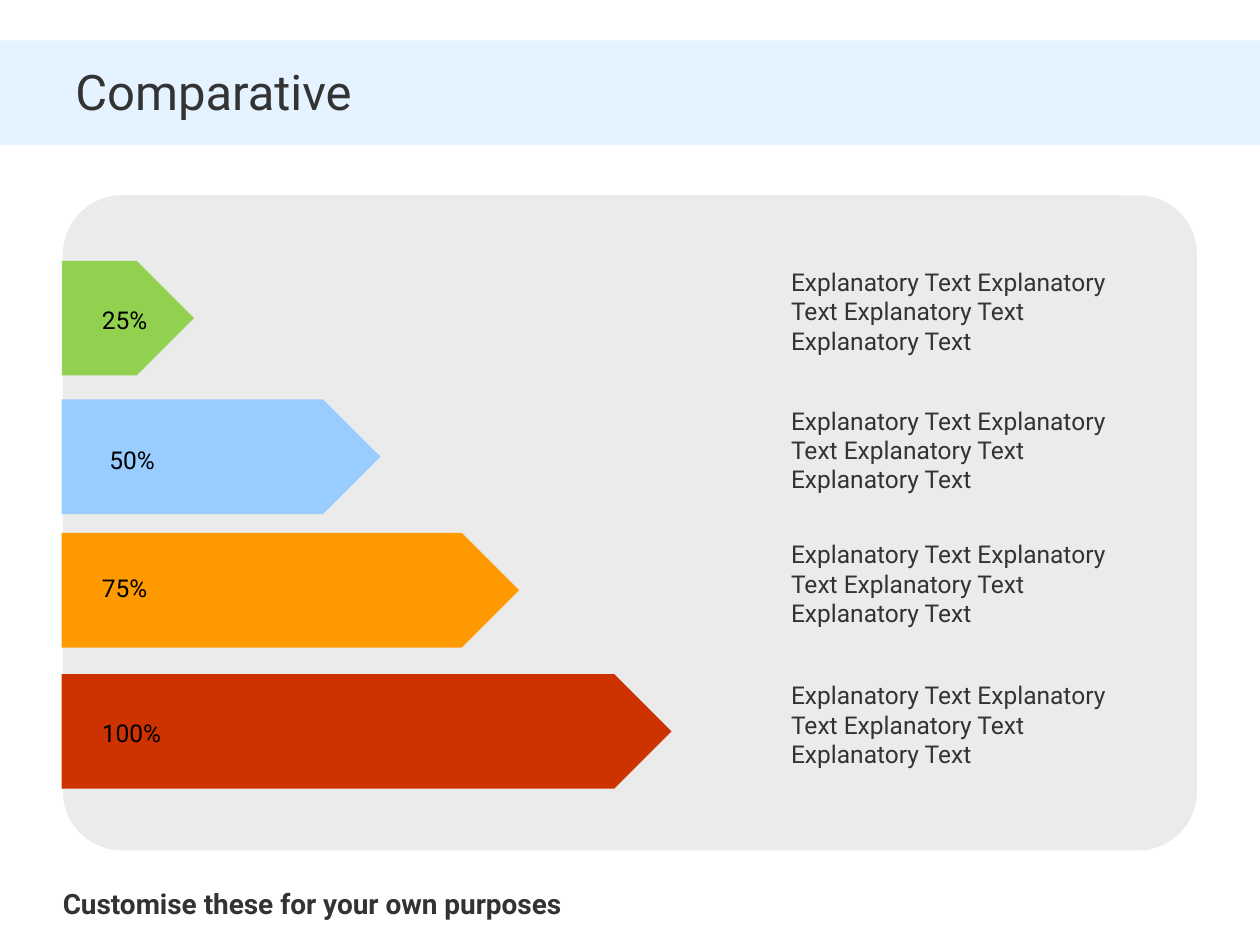
from dataclasses import dataclass

from lxml import etree
from pptx import Presentation
from pptx.dml.color import RGBColor
from pptx.enum.shapes import MSO_SHAPE
from pptx.oxml.ns import qn
from pptx.shapes.autoshape import Shape
from pptx.slide import Slide
from pptx.util import Inches, Pt

RECT = MSO_SHAPE.RECTANGLE
ROUNDED = MSO_SHAPE.ROUNDED_RECTANGLE
ARROW = MSO_SHAPE.PENTAGON


@dataclass(frozen=True)
class Theme:
    font: str = "Roboto"
    ink: str = "333333"
    label: str = "000000"
    band: str = "99CCFF"
    panel: str = "EBEBEB"
    title_size: int = 28
    body_size: int = 14
    footer_size: int = 16


@dataclass(frozen=True)
class Box:
    left: float
    top: float
    width: float
    height: float

    def lengths(self) -> list[int]:
        return [Inches(v) for v in (self.left, self.top, self.width, self.height)]


@dataclass(frozen=True)
class Level:
    label: str
    top: float
    width: float
    color: str
    label_left: float
    label_top: float


THEME = Theme()
EXPLANATION = "Explanatory Text Explanatory Text Explanatory Text Explanatory Text"
ARROW_LEFT, ARROW_HEIGHT = 0.49, 0.91
LEVELS = [
    Level("25%", 2.07, 1.05, "92D050", 0.71, 2.37),
    Level("50%", 3.17, 2.53, "99CCFF", 0.77, 3.48),
    Level("75%", 4.23, 3.63, "FF9900", 0.71, 4.5),
    Level("100%", 5.35, 4.84, "CC3300", 0.71, 5.65),
]


def add_filled(s: Slide, kind: MSO_SHAPE, box: Box, color: str) -> Shape:
    sp = s.shapes.add_shape(kind, *box.lengths())
    sp.shadow.inherit = False
    sp.fill.solid()
    sp.fill.fore_color.rgb = RGBColor.from_string(color)
    sp.line.fill.background()
    return sp


def set_alpha(sp: Shape, percent: int) -> None:
    color = sp._element.spPr.find(qn("a:solidFill")).find(qn("a:srgbClr"))
    etree.SubElement(color, qn("a:alpha")).set("val", str(percent * 1000))


def add_text(s: Slide, text: str, box: Box, size: int,
             color: str = THEME.ink, bold: bool = False) -> None:
    tf = s.shapes.add_textbox(*box.lengths()).text_frame
    tf.word_wrap = True
    p = tf.paragraphs[0]
    p.text = text
    p.font.name = THEME.font
    p.font.size = Pt(size)
    p.font.bold = bold
    p.font.color.rgb = RGBColor.from_string(color)


def add_level(s: Slide, level: Level) -> None:
    add_filled(s, ARROW, Box(ARROW_LEFT, level.top, level.width, ARROW_HEIGHT), level.color)
    add_text(s, level.label, Box(level.label_left, level.label_top, 0.84, 0.34),
             THEME.body_size, THEME.label)
    add_text(s, EXPLANATION, Box(6.18, level.top, 3.03, 1.11), THEME.body_size)


def main() -> None:
    prs = Presentation()
    prs.slide_width, prs.slide_height = Inches(10), Inches(7.5)
    s = prs.slides.add_slide(prs.slide_layouts[6])

    band = add_filled(s, RECT, Box(0, 0.32, 10, 0.83), THEME.band)
    set_alpha(band, 25)
    panel = add_filled(s, ROUNDED, Box(0.5, 1.55, 9, 5.2), THEME.panel)
    panel.adjustments[0] = 0.09

    add_text(s, "Comparative", Box(0.5, 0.44, 9, 1.11), THEME.title_size)
    for level in LEVELS:
        add_level(s, level)
    add_text(s, "Customise these for your own purposes", Box(0.4, 6.99, 7.86, 0.67),
             THEME.footer_size, bold=True)

    prs.save("out.pptx")


if __name__ == "__main__":
    main()
